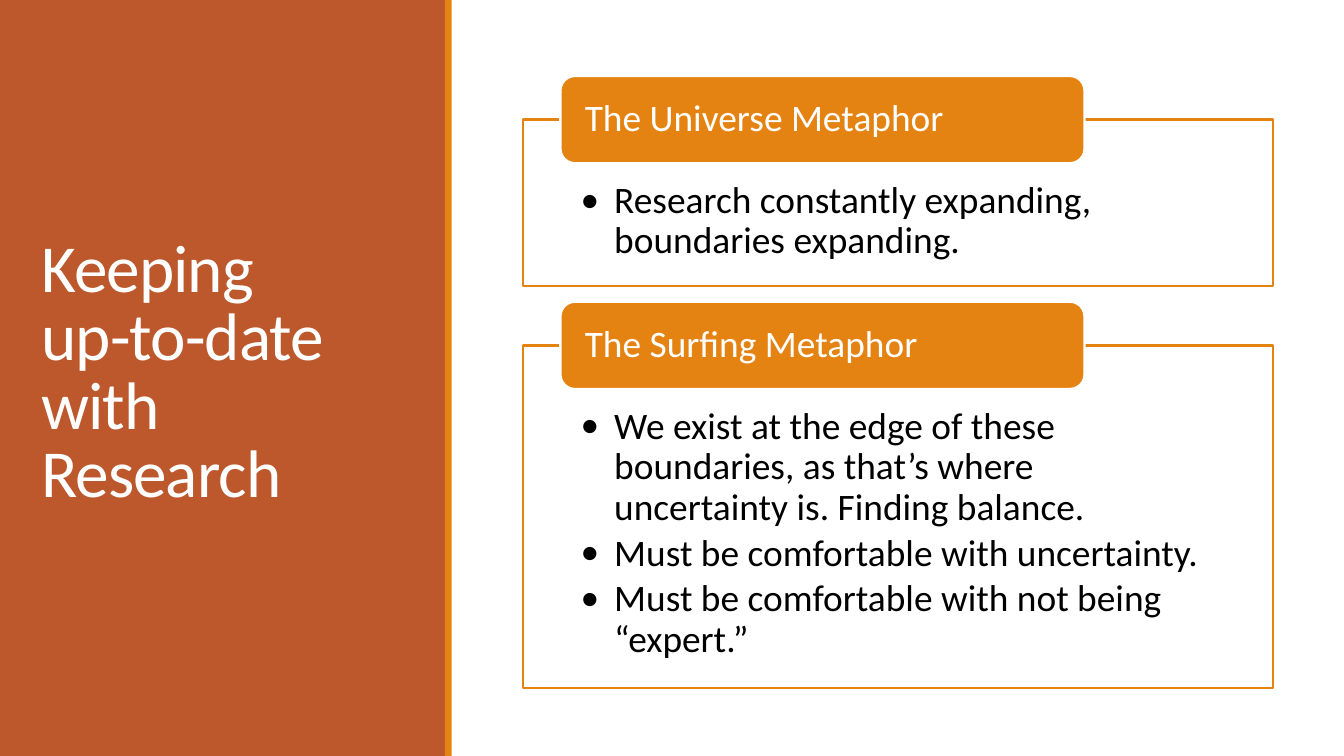
from dataclasses import dataclass

from lxml.etree import SubElement
from pptx import Presentation
from pptx.dml.color import RGBColor
from pptx.enum.shapes import MSO_SHAPE
from pptx.enum.text import MSO_ANCHOR, PP_ALIGN
from pptx.oxml.ns import qn
from pptx.shapes.autoshape import Shape
from pptx.slide import Slide
from pptx.text.text import _Paragraph as Paragraph
from pptx.util import Inches, Pt

COLORS = {"rust": "BD582C", "orange": "E48312", "white": "FFFFFF", "black": "000000"}
FONT = "Calibri"
SLIDE_WIDTH = 10
SLIDE_HEIGHT = SLIDE_WIDTH * 9 / 16
HEADING_HEIGHT = 0.65


@dataclass
class Metaphor:
    heading: str
    points: list[str]
    top: float
    height: float


METAPHORS = [
    Metaphor(
        "The Universe Metaphor",
        ["Research constantly expanding, boundaries expanding."],
        0.89,
        1.24,
    ),
    Metaphor(
        "The Surfing Metaphor",
        [
            "We exist at the edge of these boundaries, as that’s where "
            "uncertainty is. Finding balance.",
            "Must be comfortable with uncertainty.",
            "Must be comfortable with not being “expert.”",
        ],
        2.57,
        2.55,
    ),
]


def color(name: str) -> RGBColor:
    return RGBColor.from_string(COLORS[name])


def add_box(
    slide: Slide,
    kind: MSO_SHAPE,
    bounds: tuple[float, float, float, float],
    fill: str,
    line: str | None = None,
) -> Shape:
    shape = slide.shapes.add_shape(kind, *map(Inches, bounds))
    shape.shadow.inherit = False
    shape.fill.solid()
    shape.fill.fore_color.rgb = color(fill)
    if line:
        shape.line.color.rgb = color(line)
        shape.line.width = Pt(1.25)
    else:
        shape.line.fill.background()
    return shape


def set_frame(
    shape: Shape, anchor: MSO_ANCHOR, side: float, top: float, bottom: float
) -> None:
    frame = shape.text_frame
    frame.word_wrap = True
    frame.vertical_anchor = anchor
    frame.margin_left = frame.margin_right = Inches(side)
    frame.margin_top, frame.margin_bottom = Inches(top), Inches(bottom)


def style_paragraph(
    paragraph: Paragraph, size: int, font_color: str, line_spacing: float
) -> None:
    paragraph.alignment = PP_ALIGN.LEFT
    paragraph.line_spacing = line_spacing
    paragraph.font.name = FONT
    paragraph.font.size = Pt(size)
    paragraph.font.color.rgb = color(font_color)


def add_bullet(paragraph: Paragraph) -> None:
    properties = paragraph._p.get_or_add_pPr()
    properties.set("marL", str(Inches(0.25)))
    properties.set("indent", str(-Inches(0.25)))
    default_font = properties.find(qn("a:defRPr"))
    for tag, attributes in (("a:buFont", {"typeface": FONT}), ("a:buChar", {"char": "•"})):
        default_font.addprevious(SubElement(properties, qn(tag), attributes))


def add_title(slide: Slide, text: str) -> None:
    title = slide.shapes.add_textbox(
        Inches(0.21), Inches(0.42), Inches(2.95), Inches(4.73)
    )
    set_frame(title, MSO_ANCHOR.MIDDLE, 0.1, 0.05, 0.05)
    title.text_frame.text = text
    paragraph = title.text_frame.paragraphs[0]
    style_paragraph(paragraph, 36, "white", 0.85)
    for run in paragraph.runs:
        run.font._element.set("spc", "-50")


def add_metaphor(slide: Slide, metaphor: Metaphor) -> None:
    panel = add_box(
        slide,
        MSO_SHAPE.RECTANGLE,
        (3.89, metaphor.top, 5.58, metaphor.height),
        "white",
        "orange",
    )
    set_frame(panel, MSO_ANCHOR.TOP, 0.43, 0.46, 0.16)
    panel.text_frame.text = "\n".join(metaphor.points)
    for paragraph in panel.text_frame.paragraphs:
        style_paragraph(paragraph, 20, "black", 0.9)
        paragraph.space_after = Pt(3)
        add_bullet(paragraph)

    heading = add_box(
        slide,
        MSO_SHAPE.ROUNDED_RECTANGLE,
        (4.17, metaphor.top - HEADING_HEIGHT / 2, 3.9, HEADING_HEIGHT),
        "orange",
        "white",
    )
    set_frame(heading, MSO_ANCHOR.MIDDLE, 0.15, 0, 0)
    heading.text_frame.text = metaphor.heading
    style_paragraph(heading.text_frame.paragraphs[0], 20, "white", 0.9)


def main() -> None:
    """Build the slide on keeping up-to-date with research."""
    presentation = Presentation()
    presentation.slide_width = Inches(SLIDE_WIDTH)
    presentation.slide_height = Inches(SLIDE_HEIGHT)
    slide = presentation.slides.add_slide(presentation.slide_layouts[6])
    add_box(slide, MSO_SHAPE.RECTANGLE, (0, 0, 3.32, SLIDE_HEIGHT), "rust")
    add_title(slide, "Keeping \vup-to-date with Research")
    add_box(slide, MSO_SHAPE.RECTANGLE, (3.31, 0, 0.05, SLIDE_HEIGHT), "orange")
    for metaphor in METAPHORS:
        add_metaphor(slide, metaphor)
    presentation.save("out.pptx")


if __name__ == "__main__":
    main()
